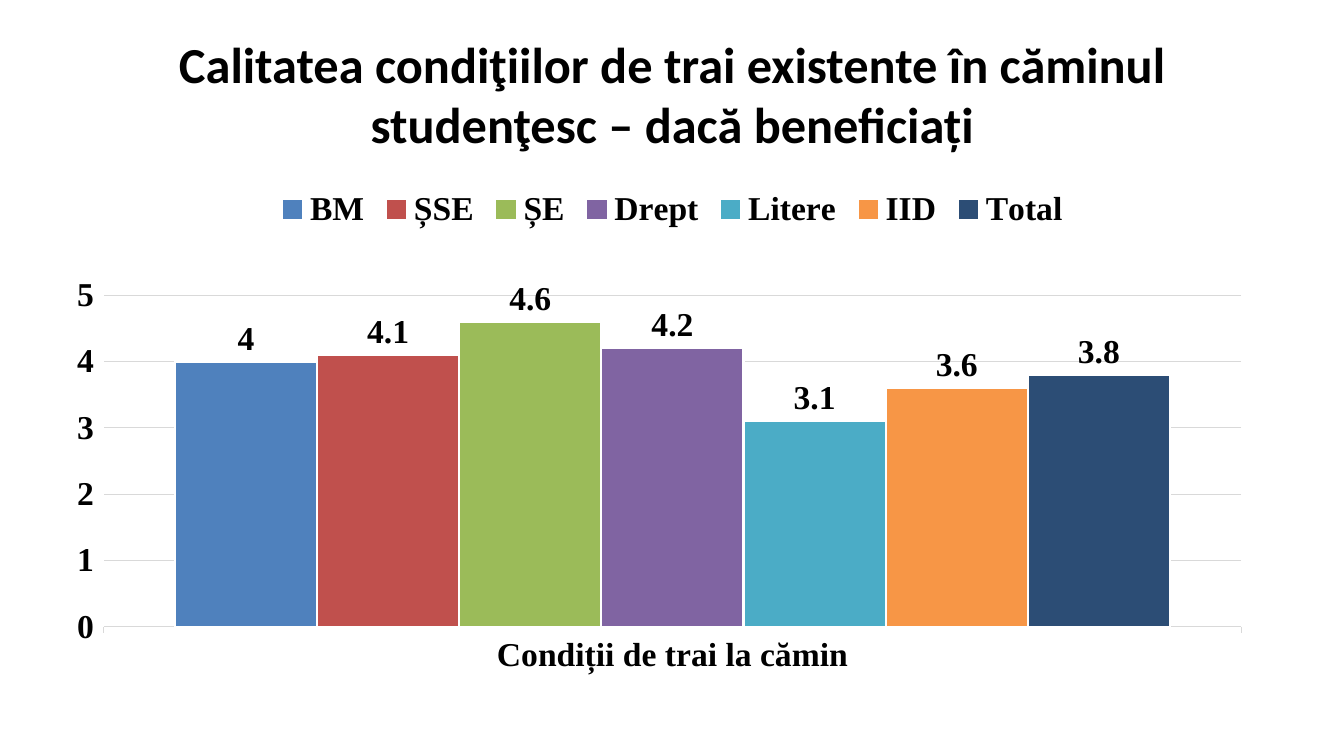
from lxml import etree
from pptx import Presentation
from pptx.chart.data import CategoryChartData
from pptx.dml.color import RGBColor
from pptx.enum.chart import XL_CHART_TYPE, XL_LABEL_POSITION, XL_LEGEND_POSITION, XL_TICK_MARK
from pptx.enum.text import MSO_ANCHOR, PP_ALIGN
from pptx.oxml.ns import qn
from pptx.util import Inches, Pt

COLUMNS = XL_CHART_TYPE.COLUMN_CLUSTERED
OUTSIDE_END = XL_LABEL_POSITION.OUTSIDE_END
LEGEND_TOP = XL_LEGEND_POSITION.TOP
TICK_OUT = XL_TICK_MARK.OUTSIDE
MIDDLE = MSO_ANCHOR.MIDDLE
CENTER = PP_ALIGN.CENTER

BLACK, WHITE, GREY = "000000", "FFFFFF", "D9D9D9"
TITLE = "Calitatea condiţiilor de trai existente în căminul studenţesc – dacă beneficiați"
CATEGORY = "Condiții de trai la cămin"
FACULTIES = [
    ("BM", 4, "4F81BD"),
    ("ȘSE", 4.1, "C0504D"),
    ("ȘE", 4.6, "9BBB59"),
    ("Drept", 4.2, "8064A2"),
    ("Litere", 3.1, "4BACC6"),
    ("IID", 3.6, "F79646"),
    ("Total", 3.8, "2C4D75"),
]
PLOT_AREA = {"x": 0.03, "y": 0.24, "w": 0.94, "h": 0.67}


def rgb(color):
    return RGBColor.from_string(color)


def format_font(font, size=24, name="Times New Roman", color=BLACK, bold=True):
    font.size = Pt(size)
    font.name = name
    font.bold = bold
    font.color.rgb = rgb(color)


def format_line(line, color, width):
    line.color.rgb = rgb(color)
    line.width = Pt(width)


def write_text(frame, text, align=CENTER, anchor=MIDDLE, **font_format):
    frame.word_wrap = True
    frame.vertical_anchor = anchor
    paragraph = frame.paragraphs[0]
    paragraph.alignment = align
    run = paragraph.add_run()
    run.text = text
    format_font(run.font, **font_format)


def add_title(slide):
    title = slide.shapes.title
    title.left, title.top = Inches(0.67), Inches(0.3)
    title.width, title.height = Inches(12), Inches(1.25)
    write_text(title.text_frame, TITLE, size=36, name="Calibri")


def place_plot_area(chart, fractions):
    """Fix the inner plot area as fractions of the chart frame."""
    plot_area = chart.plots[0]._element.getparent()
    for old_layout in plot_area.findall(qn("c:layout")):
        plot_area.remove(old_layout)
    layout = etree.Element(qn("c:layout"))
    manual = etree.SubElement(layout, qn("c:manualLayout"))
    settings = {"layoutTarget": "inner", "xMode": "edge", "yMode": "edge", **fractions}
    for tag, value in settings.items():
        etree.SubElement(manual, qn("c:" + tag)).set("val", str(value))
    plot_area.insert(0, layout)


def format_axes(chart):
    category_axis, value_axis = chart.category_axis, chart.value_axis
    for axis in (category_axis, value_axis):
        axis.major_tick_mark = TICK_OUT
        format_font(axis.tick_labels.font)
    format_line(category_axis.format.line, GREY, 0.75)
    value_axis.minimum_scale, value_axis.maximum_scale = 0, 5
    value_axis.major_unit = 1
    value_axis.format.line.fill.background()
    value_axis.has_major_gridlines = True
    format_line(value_axis.major_gridlines.format.line, GREY, 0.75)


def format_series(series, color):
    series.format.fill.solid()
    series.format.fill.fore_color.rgb = rgb(color)
    format_line(series.format.line, WHITE, 1.5)
    labels = series.data_labels
    labels.show_value = True
    labels.position = OUTSIDE_END
    format_font(labels.font)


def add_quality_chart(slide):
    data = CategoryChartData()
    data.categories = [CATEGORY]
    for faculty, score, _ in FACULTIES:
        data.add_series(faculty, [score])
    chart = slide.shapes.add_chart(
        COLUMNS, Inches(0.67), Inches(1.75), Inches(12), Inches(4.95), data
    ).chart
    format_font(chart.font)
    chart.has_title = False
    chart.has_legend = True
    chart.legend.position = LEGEND_TOP
    chart.legend.include_in_layout = False
    format_font(chart.legend.font)
    plot = chart.plots[0]
    plot.gap_width = 100
    plot.overlap = 0
    plot.vary_by_categories = False
    for series, (_, _, color) in zip(plot.series, FACULTIES):
        format_series(series, color)
    format_axes(chart)
    place_plot_area(chart, PLOT_AREA)


def main():
    presentation = Presentation()
    presentation.slide_width = Inches(13.33)
    presentation.slide_height = Inches(7.5)
    slide = presentation.slides.add_slide(presentation.slide_layouts[5])
    add_title(slide)
    add_quality_chart(slide)
    presentation.save("out.pptx")


if __name__ == "__main__":
    main()
